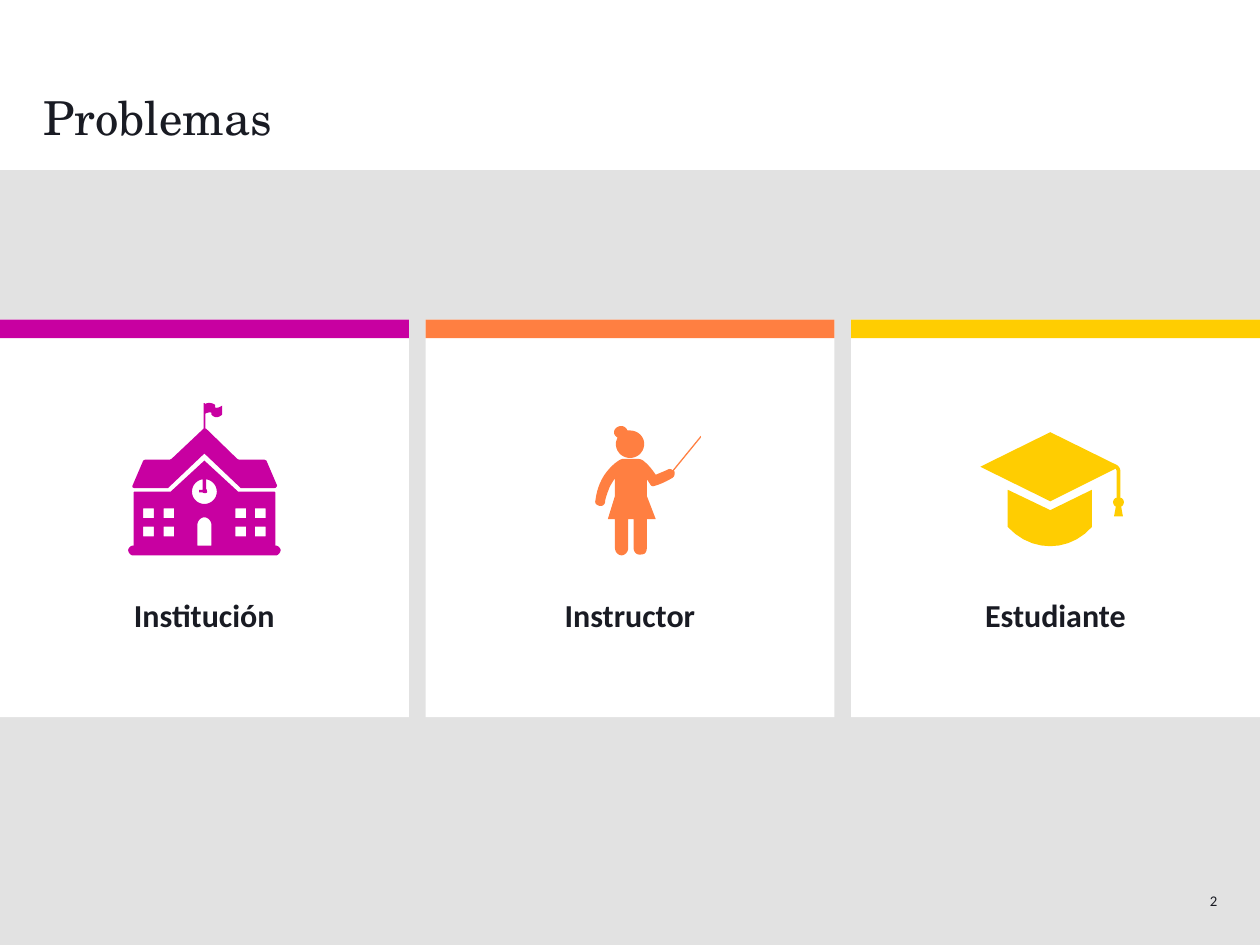
from math import cos, pi, sin

from pptx import Presentation
from pptx.dml.color import RGBColor
from pptx.enum.shapes import MSO_SHAPE as Preset
from pptx.enum.text import MSO_ANCHOR as Anchor, MSO_AUTO_SIZE as AutoSize, PP_ALIGN as Align
from pptx.util import Cm, Pt

INK = RGBColor(0x19, 0x1B, 0x23)
WHITE = RGBColor(0xFF, 0xFF, 0xFF)
GREY = RGBColor(0xE2, 0xE2, 0xE2)
MAGENTA = RGBColor(0xC8, 0x00, 0xA1)
ORANGE = RGBColor(0xFF, 0x7F, 0x41)
YELLOW = RGBColor(0xFF, 0xCD, 0x01)

SLIDE_WIDTH, SLIDE_HEIGHT = 36.12, 27.1
PANEL_TOP = 4.88
CARD_TOP, CARD_HEIGHT, CARD_GAP = 9.17, 11.4, 0.48
BAR_HEIGHT = 0.53
ICON_UNIT = 25.4  # one icon unit, in thousandths of a centimetre
CURVE_STEPS = 10


def outline(*parts):
    """Points of a contour: a pair is a corner, six numbers are a cubic curve."""
    points = []
    for part in parts:
        if len(part) == 2:
            points.append(part)
            continue
        x0, y0 = points[-1]
        x1, y1, x2, y2, x3, y3 = part
        for step in range(1, CURVE_STEPS + 1):
            t = step / CURVE_STEPS
            u = 1 - t
            a, b, c, d = u**3, 3 * u * u * t, 3 * u * t * t, t**3
            points.append((a * x0 + b * x1 + c * x2 + d * x3,
                           a * y0 + b * y1 + c * y2 + d * y3))
    return points


def circle(x, y, radius, count=48):
    angles = [2 * pi * i / count for i in range(count)]
    return [(x + radius * cos(a), y + radius * sin(a)) for a in angles]


def window(x, y, width=12, height=11):
    return [(x, y), (x + width, y), (x + width, y + height), (x, y + height)]


# Icon contours: x from the card's centre line, y from the icon's top
SCHOOL = [
    # flag and roof
    outline((-1, 5), (-1, 34), (-37, 68), (-39, 69), (-67, 69), (-69, 70), (-81, 98),
            (-82, 99, -81, 101, -79, 101), (-41, 101), (-40, 100), (0, 62), (40, 100),
            (41, 101), (79, 101), (81, 101, 82, 99, 82, 98), (70, 70), (68, 69), (39, 69),
            (37, 68), (2, 34), (1, 34), (1, 17), (3, 16, 6, 15, 8, 16), (8, 18),
            (11, 22, 16, 22, 20, 18), (20, 8), (17, 10, 14, 11, 12, 10), (12, 7),
            (9, 5, 5, 4, 1, 6), (0, 5)),
    # walls and base
    outline((0, 70), (-38, 105), (-79, 105), (-80, 106), (-80, 166), (-81, 166),
            (-83, 166, -86, 169, -86, 171), (-86, 174, -83, 177, -81, 177), (81, 177),
            (83, 177, 86, 174, 86, 171), (86, 169, 83, 166, 81, 166), (80, 166), (80, 106),
            (79, 105), (38, 105)),
    # clock face and hands
    circle(0, 105, 14),
    outline((-2, 91), (-2, 103), (-6, 103), (-6, 106), (-2, 106), (-1, 107, 2, 107, 3, 106),
            (3, 105, 3, 103, 2, 102), (2, 91)),
    # door
    outline((0, 134), (4, 134, 8, 138, 8, 143), (8, 166), (-8, 166), (-8, 143),
            (-8, 138, -4, 134, 0, 134)),
    *[window(x, y) for y in (124, 144.5) for x in (-69, -46, 35, 57)],
]
TEACHER = [
    # head and bun
    outline((-10, 31), (-14, 31, -18, 34, -18, 38), (-18, 41, -16, 43, -14, 44),
            (-15, 46, -16, 49, -16, 51), (-16, 60, -9, 67, 0, 67), (9, 67, 16, 60, 16, 51),
            (16, 43, 9, 36, 0, 36), (-3, 36), (-4, 33, -7, 31, -10, 31)),
    # body and pointer
    outline((80, 42), (79, 43), (48, 81), (46, 79, 44, 79, 41, 81), (29, 86),
            (25, 80, 21, 75, 16, 71), (14, 69, 11, 68, 8, 68), (-7, 68),
            (-11, 68, -14, 71, -17, 73), (-30, 84, -37, 98, -39, 115),
            (-40, 118, -38, 120, -35, 121), (-31, 122, -28, 120, -28, 115),
            (-27, 110, -25, 105, -23, 100), (-21, 96, -19, 93, -17, 90), (-17, 110),
            (-25, 136), (-17, 136), (-17, 168), (-17, 173, -14, 177, -9, 177),
            (-4, 176, -2, 172, -2, 168), (-2, 136), (4, 136), (4, 168),
            (4, 174, 8, 177, 13, 176), (17, 176, 19, 173, 19, 168), (19, 136), (29, 136),
            (19, 110), (19, 91), (23, 97), (23, 98, 25, 99, 26, 99),
            (34, 97, 40, 94, 47, 90), (50, 89, 51, 85, 50, 82), (49, 82), (80, 44)),
]
GRADUATE = [
    # board and tassel
    outline((-6, 38), (-85, 77), (-6, 116), (68, 79), (69, 82), (69, 112),
            (67, 112, 65, 114, 65, 117), (65, 119, 66, 121, 68, 122), (66, 133), (76, 133),
            (74, 122), (76, 121, 77, 119, 77, 117), (77, 114, 75, 112, 73, 112), (73, 81),
            (73, 79, 71, 76, 69, 75)),
    # cap
    outline((-54, 103), (-54, 145), (-27, 174, 15, 174, 41, 145), (41, 103), (-6, 126)),
]
CARDS = [("Institución", MAGENTA, SCHOOL),
         ("Instructor", ORANGE, TEACHER),
         ("Estudiante", YELLOW, GRADUATE)]


def paint(shape, color):
    shape.shadow.inherit = False
    shape.fill.solid()
    shape.fill.fore_color.rgb = color
    shape.line.fill.background()


def add_rectangle(slide, left, top, width, height, color):
    box = Cm(left), Cm(top), Cm(width), Cm(height)
    paint(slide.shapes.add_shape(Preset.RECTANGLE, *box), color)


def write_text(shape, text, size, font="Calibri", bold=False, align=Align.LEFT,
               anchor=Anchor.TOP, inset=0, wrap=True, line_spacing=None):
    frame = shape.text_frame
    frame.auto_size = AutoSize.NONE
    frame.word_wrap = wrap
    frame.vertical_anchor = anchor
    frame.margin_left = frame.margin_right = Cm(inset)
    frame.margin_top = frame.margin_bottom = Cm(inset)
    paragraph = frame.paragraphs[0]
    paragraph.alignment = align
    paragraph.line_spacing = line_spacing
    run = paragraph.add_run()
    run.text = text
    run.font.name, run.font.size, run.font.bold = font, Pt(size), bold
    run.font.color.rgb = INK


def add_icon(slide, center, top, contours, color):
    scaled = [[(x * ICON_UNIT, y * ICON_UNIT) for x, y in contour] for contour in contours]
    builder = slide.shapes.build_freeform(*scaled[0][0], scale=Cm(0.001))
    builder.add_line_segments(scaled[0][1:])
    for contour in scaled[1:]:
        builder.move_to(*contour[0])
        builder.add_line_segments(contour[1:])
    paint(builder.convert_to_shape(Cm(center), Cm(top)), color)


def add_card(slide, left, top, width, height, label, color, icon):
    add_rectangle(slide, left, top, width, height, WHITE)
    add_rectangle(slide, left, top, width, BAR_HEIGHT, color)
    add_icon(slide, left + width / 2, top + 2.26, icon, color)
    text_box = slide.shapes.add_textbox(Cm(left + 0.8), Cm(top + 7.77),
                                        Cm(width - 1.6), Cm(1.42))
    write_text(text_box, label, 26, bold=True, align=Align.CENTER, inset=0.13)


def add_title(slide, left, top, width, height, text):
    title = slide.shapes.title
    title.left, title.top, title.width, title.height = Cm(left), Cm(top), Cm(width), Cm(height)
    write_text(title, text, 38, font="TeX Gyre Schola", anchor=Anchor.BOTTOM, line_spacing=0.9)


def add_page_number(slide, left, top, width, height, number):
    text_box = slide.shapes.add_textbox(Cm(left), Cm(top), Cm(width), Cm(height))
    write_text(text_box, number, 12, align=Align.RIGHT, anchor=Anchor.MIDDLE, wrap=False)


def main():
    presentation = Presentation()
    presentation.slide_width, presentation.slide_height = Cm(SLIDE_WIDTH), Cm(SLIDE_HEIGHT)
    slide = presentation.slides.add_slide(presentation.slide_layouts[5])

    # Heading and grey panel
    add_title(slide, 1.24, 1.12, 33.66, 3.05, "Problemas")
    add_rectangle(slide, 0, PANEL_TOP, SLIDE_WIDTH, SLIDE_HEIGHT - PANEL_TOP, GREY)

    # Three equal cards across the slide
    width = (SLIDE_WIDTH - CARD_GAP * (len(CARDS) - 1)) / len(CARDS)
    for index, card in enumerate(CARDS):
        add_card(slide, index * (width + CARD_GAP), CARD_TOP, width, CARD_HEIGHT, *card)

    add_page_number(slide, 34.54, 25.6, 0.36, 0.48, "2")
    presentation.save("out.pptx")


if __name__ == "__main__":
    main()
